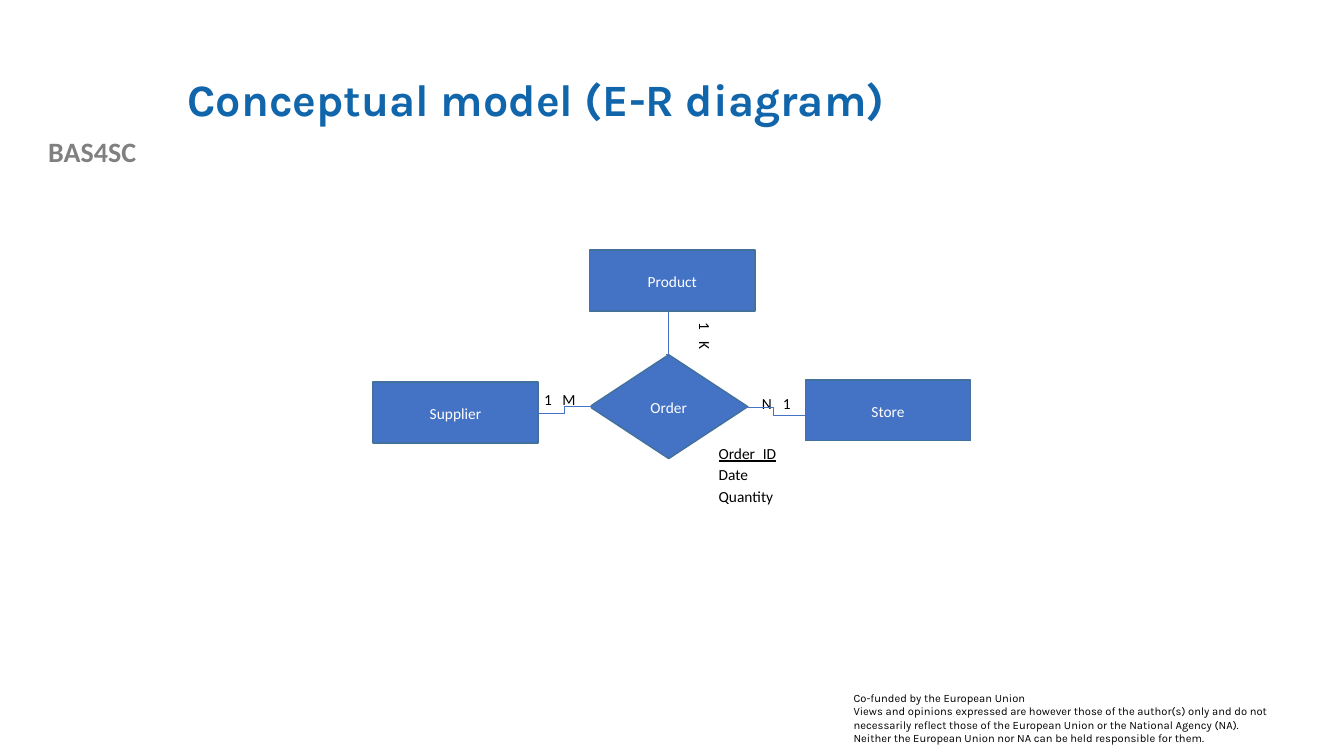
from pptx import Presentation
from pptx.dml.color import RGBColor
from pptx.enum.shapes import MSO_CONNECTOR, MSO_SHAPE
from pptx.enum.text import MSO_ANCHOR, PP_ALIGN
from pptx.oxml.ns import qn
from pptx.util import Pt
from lxml import etree

COLORS = {
    "title": "1065AB",
    "grey": "808080",
    "black": "000000",
    "white": "FFFFFF",
    "entity": "4472C4",
    "outline": "42719B",
}
ENTITY_W, ENTITY_H = 118, 43.4

DISCLAIMER = [
    "Co-funded by the European Union",
    "Views and opinions expressed are however those of the author(s) only and do not "
    "necessarily reflect those of the European Union or the National Agency (NA).",
    "Neither the European Union nor NA can be held responsible for them.",
]


def rgb(name):
    return RGBColor.from_string(COLORS[name])


def style(p, size, color, font="Calibri", bold=False):
    p.font.name = font
    p.font.size = Pt(size)
    p.font.bold = bold
    p.font.color.rgb = rgb(color)


def add_title(slide, text):
    title = slide.shapes.title
    title.left, title.top, title.width, title.height = Pt(126.7), Pt(28.8), Pt(767.5), Pt(87.8)
    title.text_frame.text = text
    title.text_frame.vertical_anchor = MSO_ANCHOR.MIDDLE
    p = title.text_frame.paragraphs[0]
    p.alignment = PP_ALIGN.LEFT
    p.line_spacing = 0.9
    style(p, 32, "title", "Karla", bold=True)


def add_text(slide, x, y, w, h, lines, size, color, font, bold=False, align=PP_ALIGN.LEFT):
    tf = slide.shapes.add_textbox(Pt(x), Pt(y), Pt(w), Pt(h)).text_frame
    tf.word_wrap = True
    tf.text = "\n".join(lines)
    for p in tf.paragraphs:
        p.alignment = align
        style(p, size, color, font, bold)


def add_node(slide, x, y, text, kind=MSO_SHAPE.FLOWCHART_PROCESS, w=ENTITY_W, h=ENTITY_H):
    """Add an entity box or, with another kind, the relationship diamond."""
    sp = slide.shapes.add_shape(kind, Pt(x), Pt(y), Pt(w), Pt(h))
    sp.shadow.inherit = False
    sp.fill.solid()
    sp.fill.fore_color.rgb = rgb("entity")
    sp.line.color.rgb = rgb("outline")
    sp.line.width = Pt(1)
    tf = sp.text_frame
    tf.text = text
    tf.vertical_anchor = MSO_ANCHOR.MIDDLE
    p = tf.paragraphs[0]
    p.alignment = PP_ALIGN.CENTER
    p.line_spacing = 1.07
    style(p, 11, "white")


def add_label(slide, x, y, w, h):
    """Add a white label box and return it with its empty paragraph."""
    sp = slide.shapes.add_shape(MSO_SHAPE.RECTANGLE, Pt(x), Pt(y), Pt(w), Pt(h))
    sp.shadow.inherit = False
    sp.fill.solid()
    sp.fill.fore_color.rgb = rgb("white")
    sp.line.fill.background()
    sp.text_frame.vertical_anchor = MSO_ANCHOR.TOP
    p = sp.text_frame.paragraphs[0]
    p.alignment = PP_ALIGN.LEFT
    p.line_spacing = 1.15
    return sp, p


def add_cardinality(slide, x, y, w, h, first, second, tab, rotation=0):
    sp, p = add_label(slide, x, y, w, h)
    sp.rotation = rotation
    tabs = etree.SubElement(p._p.get_or_add_pPr(), qn("a:tabLst"))
    etree.SubElement(tabs, qn("a:tab"), pos=str(Pt(tab)), algn="l")
    p.add_run().text = f"{first}\t{second}"
    style(p, 11, "black")


def add_attributes(slide, x, y, w, h, key, others):
    _, p = add_label(slide, x, y, w, h)
    r = p.add_run()
    r.text = key
    r.font.underline = True
    for name in others:
        p.add_line_break()
        p.add_run().text = name
    style(p, 11, "black")


def add_link(slide, x1, y1, x2, y2):
    cxn = slide.shapes.add_connector(MSO_CONNECTOR.ELBOW, Pt(x1), Pt(y1), Pt(x2), Pt(y2))
    cxn.line.color.rgb = rgb("entity")
    cxn.line.width = Pt(0.5)
    etree.SubElement(cxn._element.spPr, qn("a:effectLst"))


def main():
    prs = Presentation()
    prs.slide_width, prs.slide_height = Pt(960), Pt(540)
    slide = prs.slides.add_slide(prs.slide_layouts[5])

    add_text(slide, 0, 92.2, 131.8, 31, ["BAS4SC"], 20, "grey", "Calibri",
             bold=True, align=PP_ALIGN.CENTER)
    add_text(slide, 602.6, 490.3, 318.2, 46, DISCLAIMER, 8, "black", "Karla")
    add_title(slide, "Conceptual model (E-R diagram)")

    add_cardinality(slide, 537.1, 275.8, 38.2, 22.3, "N", "1", 15)
    add_node(slide, 421.2, 253.4, "Order", MSO_SHAPE.FLOWCHART_DECISION, 113, 74.2)
    add_cardinality(slide, 381.6, 272.9, 40.3, 22.3, "1", "M", 13)
    add_node(slide, 266.4, 272.9, "Supplier")
    add_link(slide, 383.8, 295.4, 422.6, 290.6)
    add_link(slide, 528.5, 290.9, 576, 296.6)
    add_node(slide, 575.3, 271.4, "Store")
    add_attributes(slide, 506.2, 311.8, 67, 49.7, "Order_ID", ["Date", "Quantity"])
    add_link(slide, 479.5, 221.8, 475.9, 253.4)
    add_node(slide, 421.2, 178.6, "Product")
    add_cardinality(slide, 486.7, 231.1, 36.7, 21.6, "1", "K", 13, rotation=90)

    prs.save("out.pptx")


if __name__ == "__main__":
    main()
